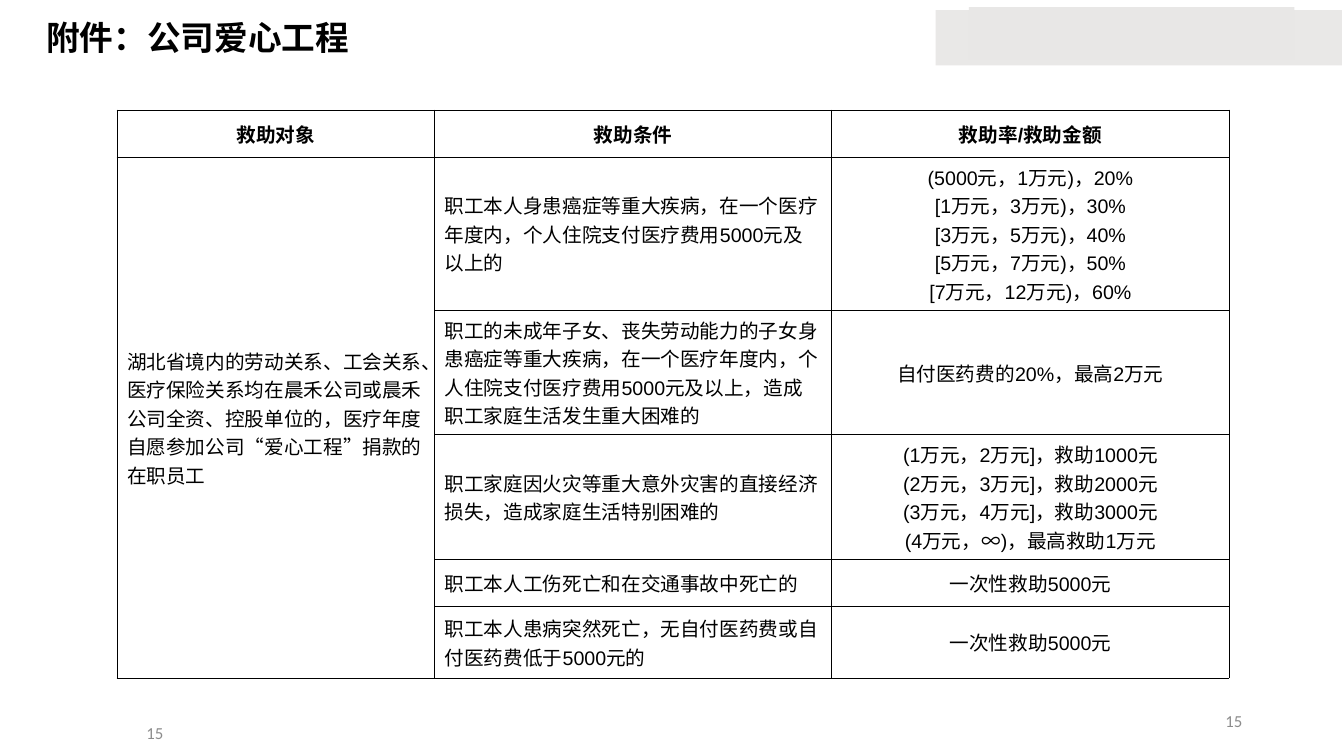
import dataclasses

import lxml.etree
import pptx
import pptx.dml.color
import pptx.enum.shapes
import pptx.enum.text
import pptx.oxml.ns
import pptx.util

Inches = pptx.util.Inches
Align = pptx.enum.text.PP_ALIGN
Middle = pptx.enum.text.MSO_ANCHOR.MIDDLE


@dataclasses.dataclass(frozen=True)
class Theme:
    """Hold the colours, fonts and type sizes of the slide."""
    ink: str = "000000"
    number: str = "8C8C8C"
    band: str = "E9E8E7"
    plate: str = "E8E7E6"
    body_font: str = "Arial"
    number_font: str = "Calibri"
    title_size: int = 24
    body_size: int = 14
    number_size: int = 12
    border: float = 0.5


THEME = Theme()
TITLE = {"size": THEME.title_size, "name": THEME.body_font, "bold": True}
HEADER = {"size": THEME.body_size, "name": THEME.body_font, "bold": True}
BODY = {"size": THEME.body_size, "name": THEME.body_font, "bold": False}
NUMBER = {"size": THEME.number_size, "name": THEME.number_font, "bold": False}

COLUMN_WIDTHS = [3.15, 3.94, 3.94]
ROW_HEIGHTS = [0.47, 1.42, 1.18, 1.18, 0.47, 0.71]
HEADINGS = ["救助对象", "救助条件", "救助率/救助金额"]
RECIPIENTS = ("湖北省境内的劳动关系、工会关系、医疗保险关系均在晨禾公司或晨禾"
              "公司全资、控股单位的，医疗年度自愿参加公司“爱心工程”捐款的在职员工")
RULES = [
    ("职工本人身患癌症等重大疾病，在一个医疗年度内，个人住院支付医疗费用5000元及以上的",
     ["(5000元，1万元)，20%", "[1万元，3万元)，30%", "[3万元，5万元)，40%",
      "[5万元，7万元)，50%", "[7万元，12万元)，60%"]),
    ("职工的未成年子女、丧失劳动能力的子女身患癌症等重大疾病，在一个医疗年度内，"
     "个人住院支付医疗费用5000元及以上，造成职工家庭生活发生重大困难的",
     ["自付医药费的20%，最高2万元"]),
    ("职工家庭因火灾等重大意外灾害的直接经济损失，造成家庭生活特别困难的",
     ["(1万元，2万元]，救助1000元", "(2万元，3万元]，救助2000元",
      "(3万元，4万元]，救助3000元", "(4万元，∞)，最高救助1万元"]),
    ("职工本人工伤死亡和在交通事故中死亡的", ["一次性救助5000元"]),
    ("职工本人患病突然死亡，无自付医药费或自付医药费低于5000元的", ["一次性救助5000元"]),
]


def colour(value):
    """Turn a hex string into a colour."""
    return pptx.dml.color.RGBColor.from_string(value)


def write(frame, lines, style, align=Align.LEFT, ink=THEME.ink):
    """Write one paragraph per line in the given style."""
    for index, line in enumerate(lines):
        para = frame.add_paragraph() if index else frame.paragraphs[0]
        para.alignment = align
        span = para.add_run()
        span.text = line
        for name, value in style.items():
            setattr(span.font, name, pptx.util.Pt(value) if name == "size" else value)
        span.font.color.rgb = colour(ink)


def set_frame(frame):
    """Wrap the text, keep its size and centre it vertically."""
    settings = {"word_wrap": True, "vertical_anchor": Middle,
                "auto_size": pptx.enum.text.MSO_AUTO_SIZE.NONE}
    for name, value in settings.items():
        setattr(frame, name, value)


def add_block(slide, place, fill):
    """Add a plain filled rectangle."""
    kind = pptx.enum.shapes.MSO_SHAPE.RECTANGLE
    block = slide.shapes.add_shape(kind, *map(Inches, place))
    block.shadow.inherit = False
    block.fill.solid()
    block.fill.fore_color.rgb = colour(fill)
    block.line.fill.background()


def add_number(slide, place):
    """Add a right-aligned page number."""
    box = slide.shapes.add_textbox(*map(Inches, place))
    set_frame(box.text_frame)
    write(box.text_frame, ["15"], NUMBER, Align.RIGHT, THEME.number)


def set_title(slide, place, text):
    """Move and format the title placeholder."""
    title = slide.shapes.title
    for name, value in zip(("left", "top", "width", "height"), place):
        setattr(title, name, Inches(value))
    set_frame(title.text_frame)
    write(title.text_frame, [text], TITLE)


def format_cell(cell):
    """Clear the fill, centre the text vertically and draw thin borders."""
    qn = pptx.oxml.ns.qn
    properties = cell._tc.get_or_add_tcPr()
    for side in ("a:lnL", "a:lnR", "a:lnT", "a:lnB"):
        width = str(pptx.util.Pt(THEME.border))
        edge = lxml.etree.SubElement(properties, qn(side), w=width)
        fill = lxml.etree.SubElement(edge, qn("a:solidFill"))
        lxml.etree.SubElement(fill, qn("a:srgbClr"), val=THEME.ink)
    cell.fill.background()
    cell.vertical_anchor = Middle


def add_aid_table(slide, left, top):
    """Add the table of aid conditions and amounts."""
    frame = slide.shapes.add_table(
        len(ROW_HEIGHTS), len(COLUMN_WIDTHS), Inches(left), Inches(top),
        Inches(sum(COLUMN_WIDTHS)), Inches(sum(ROW_HEIGHTS)))
    table = frame.table
    table.horz_banding = False
    for column, width in zip(table.columns, COLUMN_WIDTHS):
        column.width = Inches(width)
    for row, height in zip(table.rows, ROW_HEIGHTS):
        row.height = Inches(height)
    for cell in table.iter_cells():
        format_cell(cell)
    for index, heading in enumerate(HEADINGS):
        write(table.cell(0, index).text_frame, [heading], HEADER, Align.CENTER)
    table.cell(1, 0).merge(table.cell(len(RULES), 0))
    write(table.cell(1, 0).text_frame, [RECIPIENTS], BODY)
    for index, (condition, amounts) in enumerate(RULES, 1):
        write(table.cell(index, 1).text_frame, [condition], BODY)
        write(table.cell(index, 2).text_frame, amounts, BODY, Align.CENTER)


def main():
    """Build the slide and save the deck."""
    deck = pptx.Presentation()
    deck.slide_width, deck.slide_height = Inches(13.33), Inches(7.5)
    slide = deck.slides.add_slide(deck.slide_layouts[5])
    add_block(slide, (9.28, 0.1, 4.03, 0.55), THEME.band)
    add_block(slide, (9.61, 0.07, 3.23, 0.52), THEME.plate)
    add_number(slide, (9.42, 6.95, 3, 0.4))
    add_number(slide, (0.33, 7.07, 1.39, 0.4))
    set_title(slide, (0.36, 0.13, 7.66, 0.47), "附件：公司爱心工程")
    add_aid_table(slide, 1.16, 1.09)
    deck.save("out.pptx")


if __name__ == "__main__":
    main()
